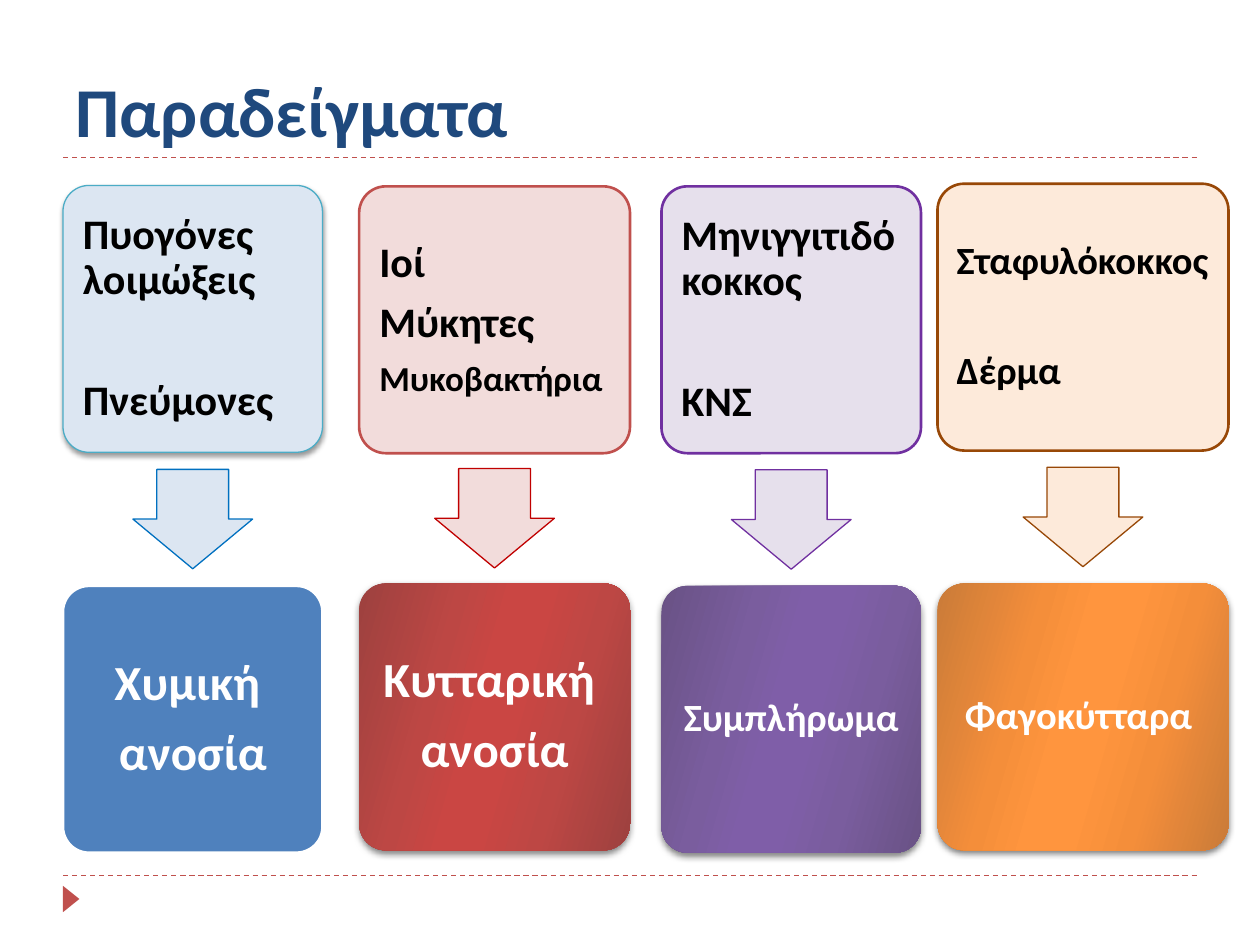
from dataclasses import dataclass

import pptx
import pptx.dml.color
import pptx.enum.dml
import pptx.enum.shapes
import pptx.enum.text
import pptx.oxml
import pptx.oxml.ns
import pptx.util

Pt = pptx.util.Pt
SHAPE = pptx.enum.shapes.MSO_SHAPE
ALIGN = pptx.enum.text.PP_ALIGN
ANCHOR = pptx.enum.text.MSO_ANCHOR
NAMESPACE = pptx.oxml.ns.nsdecls("a")


@dataclass(frozen=True)
class Theme:
    font: str = "Calibri"
    title: str = "1F497D"
    accent: str = "C0504D"
    dark: str = "000000"
    light: str = "FFFFFF"
    title_size: int = 40
    large: int = 28
    medium: int = 24
    small: int = 22
    tiny: int = 20
    thin: float = 0.75
    thick: float = 1.5


THEME = Theme()


@dataclass(frozen=True)
class Column:
    left: float
    width: float
    cause_top: float
    defence_top: float
    pale: str
    border: str
    border_width: float
    arrow_border: str
    defence: tuple  # one solid colour, or edge, middle and centre of a gradient
    cause_lines: tuple  # (text, size, blank line above)
    defence_lines: tuple
    inset: float
    defence_inset: float


COLUMNS = (
    Column(36, 148.3, 106, 334.8, "DCE6F2", "4BACC6", THEME.thin, "0070C0", ("4F81BD",),
           (("Πυογόνες λοιμώξεις", THEME.medium, False), ("Πνεύμονες", THEME.medium, True)),
           (("Χυμική ", THEME.large, False), ("ανοσία", THEME.large, False)), 7.2, 8.6),
    Column(205.2, 154.8, 106.5, 333.4, "F2DCDB", "C0504D", THEME.thick, "C00000",
           ("9D413F", "BD4744", "CA4643"),
           (("Ιοί", THEME.medium, False), ("Μύκητες", THEME.medium, False),
            ("Μυκοβακτήρια", THEME.tiny, False)),
           (("Κυτταρική ", THEME.large, False), ("ανοσία", THEME.large, False)), 7.2, 8.6),
    Column(378, 148.3, 106.5, 334.8, "E6E0EC", "7030A0", THEME.thick, "7030A0",
           ("695285", "7A5D9E", "7F5EA8"),
           (("Μηνιγγιτιδόκοκκος", THEME.medium, False), ("ΚΝΣ", THEME.medium, True)),
           (("Συμπλήρωμα", THEME.small, False),), 7.2, 6.5),
    Column(535.7, 166.3, 105, 333.4, "FDEADA", "984807", THEME.thick, "984807",
           ("CA7B39", "F48E3A", "FF953E"),
           (("Σταφυλόκοκκος", THEME.small, False), ("Δέρμα", THEME.small, True)),
           (("Φαγοκύτταρα ", THEME.small, False),), 6.5, 6.5),
)
CARD_HEIGHT = 152.5
ARROW_WIDTH, ARROW_HEIGHT = 68.4, 56.8


def rgb(value):
    return pptx.dml.color.RGBColor.from_string(value)


def add_span(para, text, size, color):
    span = para.add_run()
    span.text = text
    span.font.name = THEME.font
    span.font.size = Pt(size)
    span.font.bold = True
    span.font.color.rgb = rgb(color)


def add_box(page, kind, left, top, width, height, fill, border=None, border_width=THEME.thin):
    box = page.shapes.add_shape(kind, Pt(left), Pt(top), Pt(width), Pt(height))
    box.shadow.inherit = False
    box.fill.solid()
    box.fill.fore_color.rgb = rgb(fill)
    if border:
        box.line.color.rgb = rgb(border)
        box.line.width = Pt(border_width)
    else:
        box.line.fill.background()
    return box


def add_shadow(box, blur, opacity):
    effects = box._element.spPr.find(pptx.oxml.ns.qn("a:effectLst"))
    effects.append(pptx.oxml.parse_xml(
        f'<a:outerShdw {NAMESPACE} blurRad="{Pt(blur)}" dist="{Pt(2)}" dir="5400000" rotWithShape="0">'
        f'<a:srgbClr val="000000"><a:alpha val="{opacity * 1000}"/></a:srgbClr></a:outerShdw>'))


def set_gradient(box, edge, middle, centre):
    box.fill.gradient()
    stops = zip((0, 30, 45, 55, 73, 100), (edge, middle, centre, centre, middle, edge))
    stop_xml = "".join(f'<a:gs pos="{place * 1000}"><a:srgbClr val="{color}"/></a:gs>'
                       for place, color in stops)
    gradient = box._element.spPr.find(pptx.oxml.ns.qn("a:gradFill"))
    old_stops = gradient.find(pptx.oxml.ns.qn("a:gsLst"))
    gradient.replace(old_stops, pptx.oxml.parse_xml(f"<a:gsLst {NAMESPACE}>{stop_xml}</a:gsLst>"))
    gradient.find(pptx.oxml.ns.qn("a:lin")).set("ang", str(16 * 60000))


def write_card(box, lines, color, align, inset):
    box.adjustments[0] = 0.1
    frame = box.text_frame
    frame.word_wrap = True
    frame.vertical_anchor = ANCHOR.MIDDLE
    frame.margin_left = frame.margin_right = frame.margin_top = frame.margin_bottom = Pt(inset)
    for index, (text, size, gap) in enumerate(lines):
        para = frame.paragraphs[0] if index == 0 else frame.add_paragraph()
        para.alignment = align
        para.line_spacing = 0.9
        para.space_after = Pt(0.35 * size)
        if gap:
            para.space_before = Pt(1.45 * size)
        add_span(para, text, size, color)


def add_title(page, left, top, width, height):
    title = page.shapes.title
    title.left, title.top, title.width, title.height = Pt(left), Pt(top), Pt(width), Pt(height)
    title.text_frame.vertical_anchor = ANCHOR.BOTTOM
    para = title.text_frame.paragraphs[0]
    para.alignment = ALIGN.LEFT
    add_span(para, "Παραδείγματα", THEME.title_size, THEME.title)


def add_frame(page, left, right, rules):
    # Dashed rules above and below the columns
    for y in rules:
        rule = page.shapes.add_connector(pptx.enum.shapes.MSO_CONNECTOR.STRAIGHT,
                                         Pt(left), Pt(y), Pt(right), Pt(y))
        rule.line.color.rgb = rgb(THEME.accent)
        rule.line.width = Pt(THEME.thin)
        rule.line.dash_style = pptx.enum.dml.MSO_LINE.DASH
        rule._element.spPr.append(pptx.oxml.parse_xml(f"<a:effectLst {NAMESPACE}/>"))
    # Footer marker
    marker = add_box(page, SHAPE.ISOSCELES_TRIANGLE, left - 2.9, 509, 15.1, 9.4, THEME.accent)
    marker.rotation = 90


def add_column(page, column):
    # Cause card
    cause = add_box(page, SHAPE.ROUNDED_RECTANGLE, column.left, column.cause_top, column.width,
                    CARD_HEIGHT, column.pale, column.border, column.border_width)
    write_card(cause, column.cause_lines, THEME.dark, ALIGN.LEFT, column.inset)

    # Arrow centred in the gap between the cards
    middle = (column.cause_top + CARD_HEIGHT + column.defence_top) / 2
    arrow = add_box(page, SHAPE.DOWN_ARROW, column.left + (column.width - ARROW_WIDTH) / 2,
                    middle - ARROW_HEIGHT / 2, ARROW_WIDTH, ARROW_HEIGHT,
                    column.pale, column.arrow_border)
    arrow.adjustments[0], arrow.adjustments[1] = 0.6, 0.5

    # Defence card
    solid = len(column.defence) == 1
    defence = add_box(page, SHAPE.ROUNDED_RECTANGLE, column.left, column.defence_top, column.width,
                      CARD_HEIGHT, column.defence[0], THEME.light if solid else None, THEME.thick)
    if solid:
        add_shadow(cause, 3, 40)
    else:
        set_gradient(defence, *column.defence)
        add_shadow(defence, 4, 50)
    write_card(defence, column.defence_lines, THEME.light, ALIGN.CENTER, column.defence_inset)


def main():
    deck = pptx.Presentation()
    deck.slide_width, deck.slide_height = Pt(720), Pt(540)
    page = deck.slides.add_slide(deck.slide_layouts[5])
    add_frame(page, 36, 684, (500.4, 90))
    add_title(page, 36, 18, 648, 72)
    for column in COLUMNS:
        add_column(page, column)
    deck.save("out.pptx")


if __name__ == "__main__":
    main()
